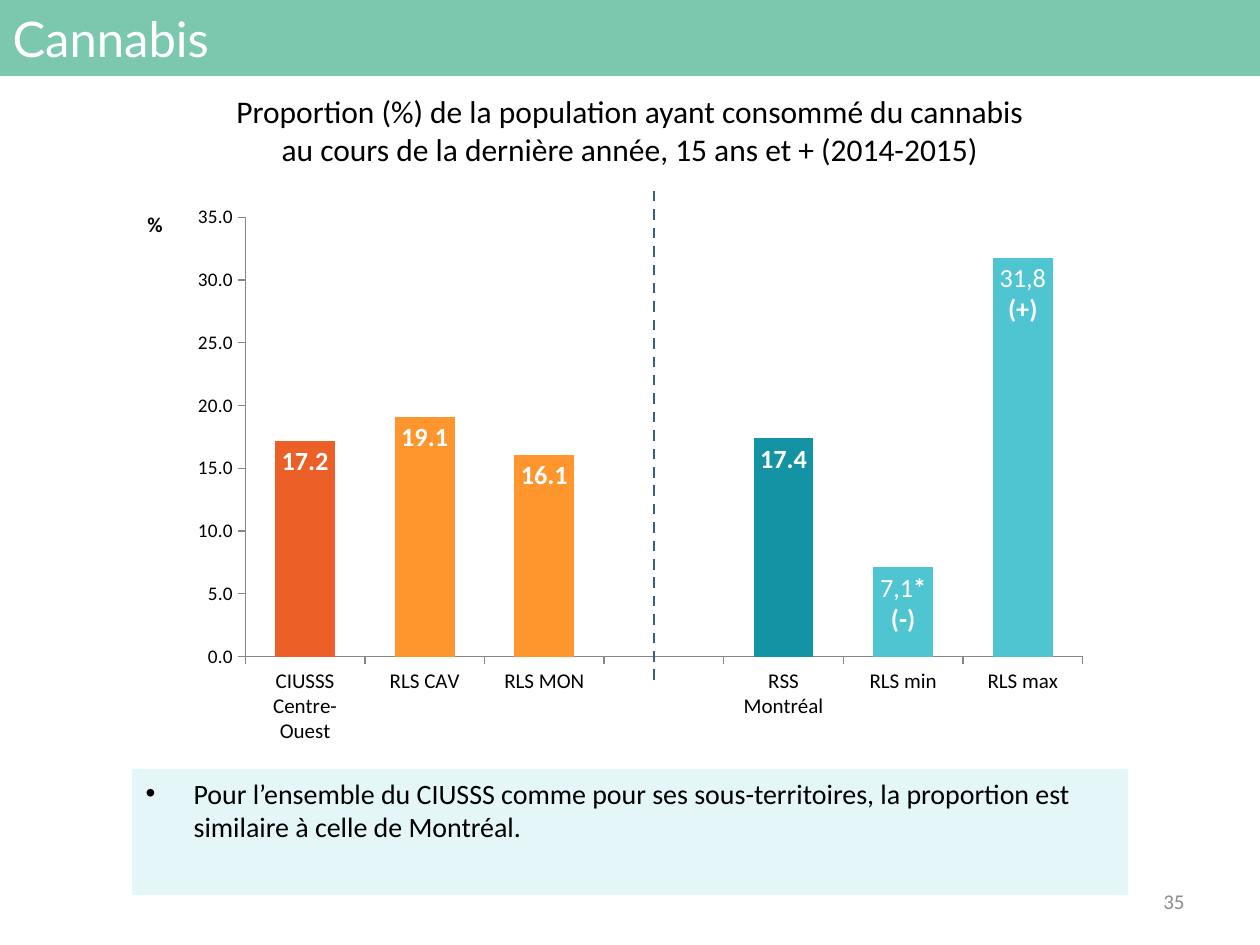
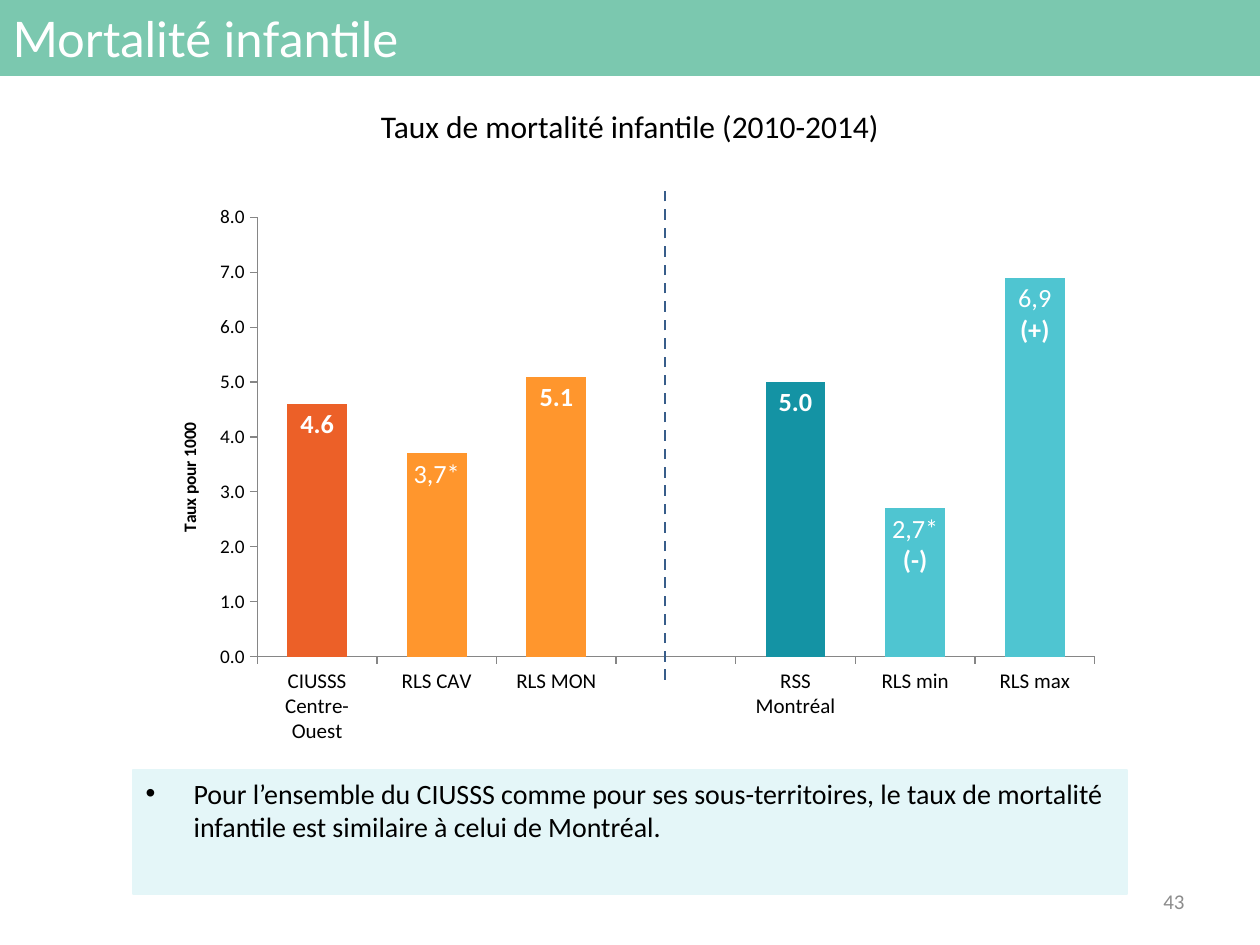
from lxml.etree import SubElement
from pptx import Presentation
from pptx.chart.data import CategoryChartData
from pptx.dml.color import RGBColor
from pptx.enum.chart import XL_CHART_TYPE, XL_LABEL_POSITION, XL_TICK_MARK
from pptx.enum.dml import MSO_LINE
from pptx.enum.shapes import MSO_CONNECTOR
from pptx.enum.text import MSO_ANCHOR, MSO_AUTO_SIZE, PP_ALIGN
from pptx.oxml import parse_xml
from pptx.oxml.ns import nsdecls, qn
from pptx.util import Emu, Pt

# Content: label lines are (regular text, bold text) pairs, keyed by bar
CATEGORIES = ["CIUSSS\nCentre-Ouest", "RLS CAV", "RLS MON", "",
              "RSS\nMontréal", "RLS min", "RLS max"]
SLIDES = [
    {
        "title": "Cannabis",
        "heading": ["Proportion (%) de la population ayant consommé du cannabis",
                    "au cours de la dernière année, 15 ans et + (2014-2015)"],
        "heading_top": 86,
        "values": [17.2, 19.1, 16.1, None, 17.4, 7.1, 31.8],
        "labels": {5: [("7,1", "*"), ("", "(-)")], 6: [("31,8", ""), ("", "(+)")]},
        "scale": {"minimum_scale": 0, "maximum_scale": 35, "major_unit": 5},
        "unit": {"text": "%", "size": 12, "rotation": 0, "place": (0.01, 0.02)},
        "chart_left": 134,
        "divider": 654,
        "message": "Pour l’ensemble du CIUSSS comme pour ses sous-territoires, "
                   "la proportion est similaire à celle de Montréal.",
        "number": "35",
    },
    {
        "title": "Mortalité infantile",
        "heading": ["Taux de mortalité infantile (2010-2014)"],
        "heading_top": 101,
        "values": [4.6, 3.7, 5.1, None, 5.0, 2.7, 6.9],
        "labels": {1: [("3,7*", "")], 5: [("2,7*", ""), ("", "(-)")],
                   6: [("6,9", ""), ("", "(+)")]},
        "scale": {"minimum_scale": 0, "maximum_scale": 8, "major_unit": 1},
        "unit": {"text": "Taux pour 1000", "size": 10, "rotation": -90,
                 "place": (0.03, 0.4)},
        "chart_left": 146,
        "divider": 665,
        "message": "Pour l’ensemble du CIUSSS comme pour ses sous-territoires, "
                   "le taux de mortalité infantile est similaire à celui de Montréal.",
        "number": "43",
    },
]

# Theme
THEME = {
    "band": "7BC8AF", "panel": "E4F6F8", "divider": "385D8A", "axis": "868686",
    "bars": ["EC6028", "FF962D", "FF962D", "FDB813", "1493A4", "4FC5D1", "4FC5D1"],
    "title": {"name": "Lato", "size": 28, "color": "FFFFFF"},
    "heading": {"name": "Calibri", "size": 18, "color": "000000"},
    "message": {"name": "Calibri", "size": 16, "color": "000000"},
    "number": {"name": "Calibri", "size": 12, "color": "8C8C8C"},
    "chart": {"name": "Calibri", "size": 10, "color": "000000"},
    "categories": {"name": "Calibri", "size": 12, "color": "000000"},
    "scale": {"name": "Calibri", "size": 11, "color": "000000"},
    "label": {"name": "Calibri", "size": 15, "color": "FFFFFF", "bold": True},
}

# Geometry in px: left, top, width, height
PX_PER_INCH = 126
SLIDE_SIZE = (1260, 945)
TITLE_BOX = (0, 0, 1260, 75)
MESSAGE_BOX = (133, 770, 994, 124)
NUMBER_BOX = (903, 876, 294, 50)
CHART_TOP, CHART_WIDTH, CHART_HEIGHT = 195, 968, 561
DIVIDER_TOP, DIVIDER_BOTTOM = 190, 680
HEADING_LINE, HEADING_PADDING = 38, 13
BULLET_INDENT = 48
PLOT_AREA = (0.115, 0.04, 0.865, 0.783)  # fractions of the chart


def px(length):
    return Emu(round(length * 914400 / PX_PER_INCH))


def set_all(target, values):
    for name, value in values.items():
        setattr(target, name, value)


def place(shape, box):
    set_all(shape, dict(zip(("left", "top", "width", "height"), map(px, box))))


def style_font(font, style):
    for name, value in style.items():
        if name == "color":
            font.color.rgb = RGBColor.from_string(value)
        else:
            setattr(font, name, Pt(value) if name == "size" else value)


def write(text_frame, lines, style, align, anchor):
    set_all(text_frame, {"word_wrap": True, "auto_size": MSO_AUTO_SIZE.NONE,
                         "vertical_anchor": anchor})
    for index, line in enumerate(lines):
        paragraph = text_frame.add_paragraph() if index else text_frame.paragraphs[0]
        paragraph.alignment = align
        run = paragraph.add_run()
        run.text = line
        style_font(run.font, style)


def paint(shape, color):
    shape.fill.solid()
    shape.fill.fore_color.rgb = RGBColor.from_string(color)
    shape.line.color.rgb = RGBColor.from_string(color)
    shape.line.width = Pt(0.75)


def add_text(slide, box, lines, style, align, anchor=MSO_ANCHOR.TOP):
    text_box = slide.shapes.add_textbox(*map(px, box))
    write(text_box.text_frame, lines, style, align, anchor)


def fill_placeholder(shape, box, text, style, color, anchor):
    place(shape, box)
    paint(shape, color)
    write(shape.text_frame, [text], style, PP_ALIGN.LEFT, anchor)


def add_message(shape, text):
    fill_placeholder(shape, MESSAGE_BOX, text, THEME["message"], THEME["panel"],
                     MSO_ANCHOR.TOP)
    paragraph = shape.text_frame.paragraphs[0]
    paragraph.space_before = Pt(4)
    properties = paragraph._p.get_or_add_pPr()
    properties.set("marL", str(px(BULLET_INDENT)))
    properties.set("indent", str(-px(BULLET_INDENT)))
    SubElement(properties, qn("a:buFont")).set("typeface", "Arial")
    SubElement(properties, qn("a:buChar")).set("char", "•")


def set_layout(element, index, fractions, inner=False):
    """Give a chart part a fixed place within the chart."""
    previous = element.find(qn("c:layout"))
    if previous is not None:
        element.remove(previous)
    layout = parse_xml(f"<c:layout {nsdecls('c')}><c:manualLayout/></c:layout>")
    settings = [("layoutTarget", "inner")] if inner else []
    settings += [("xMode", "edge"), ("yMode", "edge")]
    settings += zip("xywh", fractions)
    for name, value in settings:
        SubElement(layout[0], qn(f"c:{name}")).set("val", str(value))
    element.insert(index, layout)


def style_axes(chart, content):
    for axis, style in ((chart.category_axis, THEME["categories"]),
                        (chart.value_axis, THEME["scale"])):
        set_all(axis, {"has_major_gridlines": False,
                       "major_tick_mark": XL_TICK_MARK.OUTSIDE,
                       "minor_tick_mark": XL_TICK_MARK.NONE})
        style_font(axis.tick_labels.font, style)
        axis.format.line.color.rgb = RGBColor.from_string(THEME["axis"])
    axis = chart.value_axis
    set_all(axis, content["scale"])
    set_all(axis.tick_labels, {"number_format": "0.0", "number_format_is_linked": False})

    # Unit beside the value axis
    unit = content["unit"]
    title = axis.axis_title
    write_unit = title.text_frame.paragraphs[0].add_run()
    write_unit.text = unit["text"]
    style_font(write_unit.font, {**THEME["chart"], "size": unit["size"], "bold": True})
    element = title._element
    body = next(element.iter(qn("a:bodyPr")))
    body.set("rot", str(unit["rotation"] * 60000))
    body.set("vert", "horz")
    set_layout(element, 1, unit["place"])


def style_bars(plot, labels):
    set_all(plot, {"gap_width": 100, "vary_by_categories": False,
                   "has_data_labels": True})
    set_all(plot.data_labels, {"show_value": True, "number_format": "0.0",
                               "number_format_is_linked": False,
                               "position": XL_LABEL_POSITION.INSIDE_END})
    style_font(plot.data_labels.font, THEME["label"])
    series = plot.series[0]
    for index, color in enumerate(THEME["bars"]):
        fill = series.points[index].format.fill
        fill.solid()
        fill.fore_color.rgb = RGBColor.from_string(color)
    if not labels:
        return
    # Labels with their own wording; the others keep the shared settings
    set_all(series.data_labels, {"show_value": True, "number_format": "0.0",
                                 "number_format_is_linked": False,
                                 "position": XL_LABEL_POSITION.INSIDE_END})
    style_font(series.data_labels.font, THEME["label"])
    for index, lines in labels.items():
        label = series.points[index].data_label
        text_frame = label.text_frame
        for number, parts in enumerate(lines):
            paragraph = text_frame.add_paragraph() if number else text_frame.paragraphs[0]
            for text, bold in zip(parts, (False, True)):
                if text:
                    run = paragraph.add_run()
                    run.text = text
                    style_font(run.font, {**THEME["label"], "bold": bold})
        label.position = XL_LABEL_POSITION.INSIDE_END


def add_bar_chart(slide, content):
    data = CategoryChartData(number_format="0.0")
    data.categories = CATEGORIES
    data.add_series("Series 1", content["values"])
    box = (content["chart_left"], CHART_TOP, CHART_WIDTH, CHART_HEIGHT)
    chart = slide.shapes.add_chart(XL_CHART_TYPE.COLUMN_CLUSTERED, *map(px, box), data).chart
    set_all(chart, {"has_legend": False, "has_title": False})
    style_font(chart.font, THEME["chart"])
    style_axes(chart, content)
    style_bars(chart.plots[0], content["labels"])
    plot_area = next(chart._chartSpace.iter(qn("c:plotArea")))
    set_layout(plot_area, 0, PLOT_AREA, inner=True)


def add_divider(slide, x):
    divider = slide.shapes.add_connector(
        MSO_CONNECTOR.STRAIGHT, px(x), px(DIVIDER_BOTTOM), px(x), px(DIVIDER_TOP))
    divider.line.color.rgb = RGBColor.from_string(THEME["divider"])
    set_all(divider.line, {"width": Pt(1.5), "dash_style": MSO_LINE.DASH})
    SubElement(divider._element.spPr, qn("a:effectLst"))


def build_slide(presentation, content):
    slide = presentation.slides.add_slide(presentation.slide_layouts[1])
    fill_placeholder(slide.shapes.title, TITLE_BOX, content["title"], THEME["title"],
                     THEME["band"], MSO_ANCHOR.MIDDLE)
    add_text(slide, NUMBER_BOX, [content["number"]], THEME["number"],
             PP_ALIGN.RIGHT, MSO_ANCHOR.MIDDLE)
    add_message(slide.placeholders[1], content["message"])
    add_bar_chart(slide, content)
    add_divider(slide, content["divider"])
    heading = content["heading"]
    height = HEADING_LINE * len(heading) + HEADING_PADDING
    add_text(slide, (0, content["heading_top"], SLIDE_SIZE[0], height), heading,
             THEME["heading"], PP_ALIGN.CENTER)


def main():
    presentation = Presentation()
    presentation.slide_width, presentation.slide_height = map(px, SLIDE_SIZE)
    for content in SLIDES:
        build_slide(presentation, content)
    presentation.save("out.pptx")


if __name__ == "__main__":
    main()
